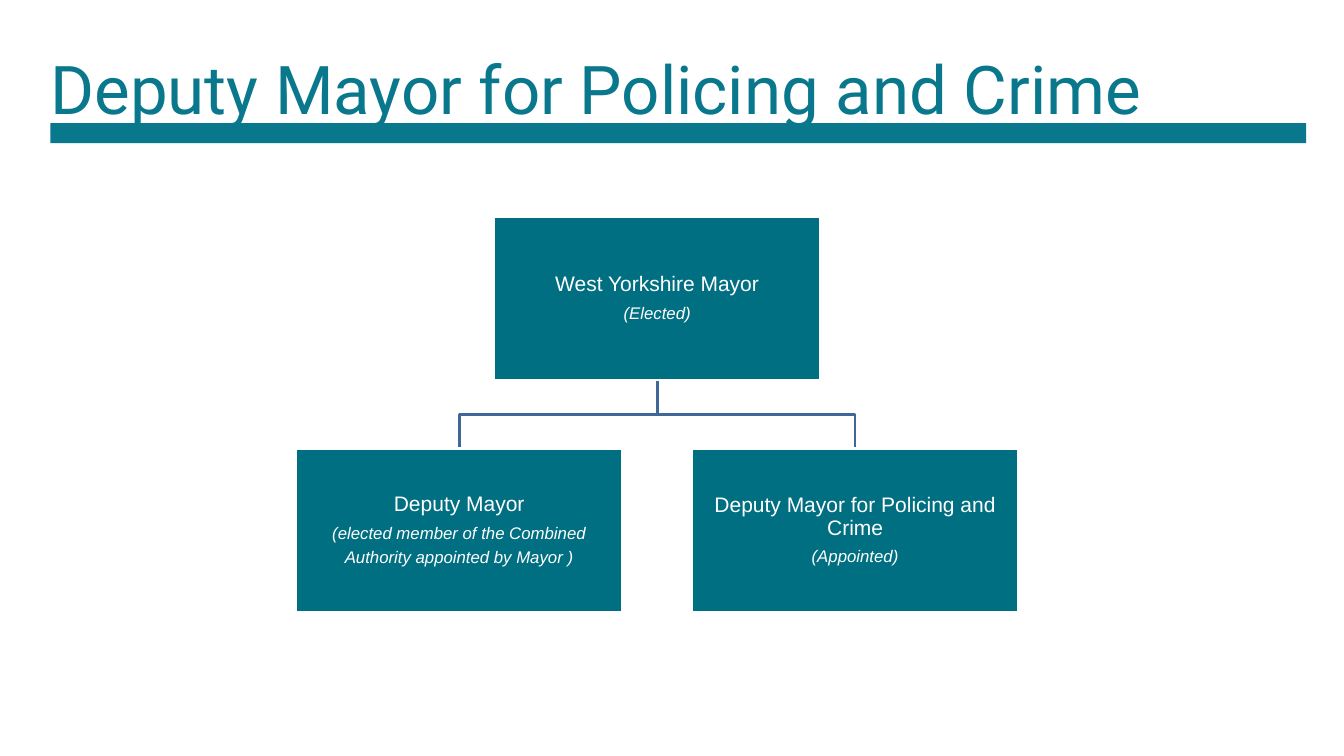
from dataclasses import dataclass

import pptx
import pptx.dml.color
import pptx.enum.shapes
import pptx.enum.text
import pptx.util

Pt = pptx.util.Pt
Align = pptx.enum.text.PP_ALIGN
Anchor = pptx.enum.text.MSO_ANCHOR


@dataclass(frozen=True)
class Theme:
    heading: str = "09778C"
    box: str = "006F81"
    branch: str = "3F6797"
    white: str = "FFFFFF"
    heading_font: str = "Roboto"
    body_font: str = "Arial"
    heading_size: float = 48
    role_size: float = 15
    note_size: float = 12
    line_width: float = 2


class OrgSlide:
    def __init__(self, slide, theme):
        self.slide = slide
        self.theme = theme

    def color(self, value):
        return pptx.dml.color.RGBColor.from_string(value)

    def frame(self, text_frame, anchor, inset):
        text_frame.word_wrap = True
        text_frame.auto_size = pptx.enum.text.MSO_AUTO_SIZE.NONE
        text_frame.vertical_anchor = anchor
        text_frame.margin_left = text_frame.margin_right = Pt(inset)
        text_frame.margin_top = text_frame.margin_bottom = Pt(inset)

    def run(self, paragraph, text, font, size, color, italic=False):
        run = paragraph.add_run()
        run.text = text
        run.font.name = font
        run.font.size = Pt(size)
        run.font.italic = italic
        run.font.color.rgb = self.color(color)

    def title(self, text, left, top, width, height):
        title = self.slide.shapes.title
        title.left, title.top = Pt(left), Pt(top)
        title.width, title.height = Pt(width), Pt(height)
        self.frame(title.text_frame, Anchor.TOP, 0)
        paragraph = title.text_frame.paragraphs[0]
        paragraph.alignment = Align.LEFT
        paragraph.line_spacing = Pt(1.4 * self.theme.heading_size)
        self.run(paragraph, text, self.theme.heading_font,
                 self.theme.heading_size, self.theme.heading)

    def rectangle(self, left, top, width, height, fill, outline=None):
        rectangle = self.slide.shapes.add_shape(
            pptx.enum.shapes.MSO_SHAPE.RECTANGLE,
            Pt(left), Pt(top), Pt(width), Pt(height))
        rectangle.shadow.inherit = False
        rectangle.fill.solid()
        rectangle.fill.fore_color.rgb = self.color(fill)
        if outline:
            rectangle.line.color.rgb = self.color(outline)
            rectangle.line.width = Pt(self.theme.line_width)
        else:
            rectangle.line.fill.background()
        return rectangle

    def branch(self, points):
        start, *rest = [(Pt(x), Pt(y)) for x, y in points]
        builder = self.slide.shapes.build_freeform(*start)
        builder.add_line_segments(rest, close=False)
        branch = builder.convert_to_shape()
        branch.shadow.inherit = False
        branch.fill.background()
        branch.line.color.rgb = self.color(self.theme.branch)
        branch.line.width = Pt(self.theme.line_width)

    def role_box(self, center, top, width, height, role, notes):
        theme = self.theme
        box = self.rectangle(center - width / 2, top, width, height,
                             theme.box, theme.white)
        self.frame(box.text_frame, Anchor.MIDDLE, 0.75)
        for index, text in enumerate([role, *notes]):
            paragraph = (box.text_frame.add_paragraph() if index
                         else box.text_frame.paragraphs[0])
            size = theme.note_size if index else theme.role_size
            paragraph.alignment = Align.CENTER
            paragraph.line_spacing = 0.9
            paragraph.space_after = Pt(0.4 * size)
            self.run(paragraph, text, theme.body_font, size, theme.white,
                     italic=index > 0)


def main():
    presentation = pptx.Presentation()
    presentation.slide_width = Pt(960)
    presentation.slide_height = Pt(540)
    theme = Theme()
    page = OrgSlide(
        presentation.slides.add_slide(presentation.slide_layouts[5]), theme)

    # Heading and its rule
    page.title("Deputy Mayor for Policing and Crime", 36, 24.5, 897, 63.4)
    page.rectangle(36, 87.9, 897, 14.4, theme.heading)

    # Chart layout
    box_width, box_height = 233.5, 116.7
    mayor_center, mayor_top = 469.4, 154.8
    deputy_offset, deputy_top = 141.4, 320.6
    mayor_bottom = mayor_top + box_height
    crossbar = (mayor_bottom + deputy_top) / 2
    deputies = [
        ("Deputy Mayor", ["(elected member of the Combined",
                          "Authority appointed by Mayor )"]),
        ("Deputy Mayor for Policing and Crime", ["(Appointed)"]),
    ]
    deputy_centers = [mayor_center - deputy_offset,
                      mayor_center + deputy_offset]

    # Branches, behind the boxes
    for center in deputy_centers:
        page.branch([(mayor_center, mayor_bottom), (mayor_center, crossbar),
                     (center, crossbar), (center, deputy_top)])

    # Mayor and deputies
    page.role_box(mayor_center, mayor_top, box_width, box_height,
                  "West Yorkshire Mayor", ["(Elected)"])
    for center, (role, notes) in zip(deputy_centers, deputies):
        page.role_box(center, deputy_top, box_width, box_height, role, notes)

    presentation.save("out.pptx")


if __name__ == "__main__":
    main()
